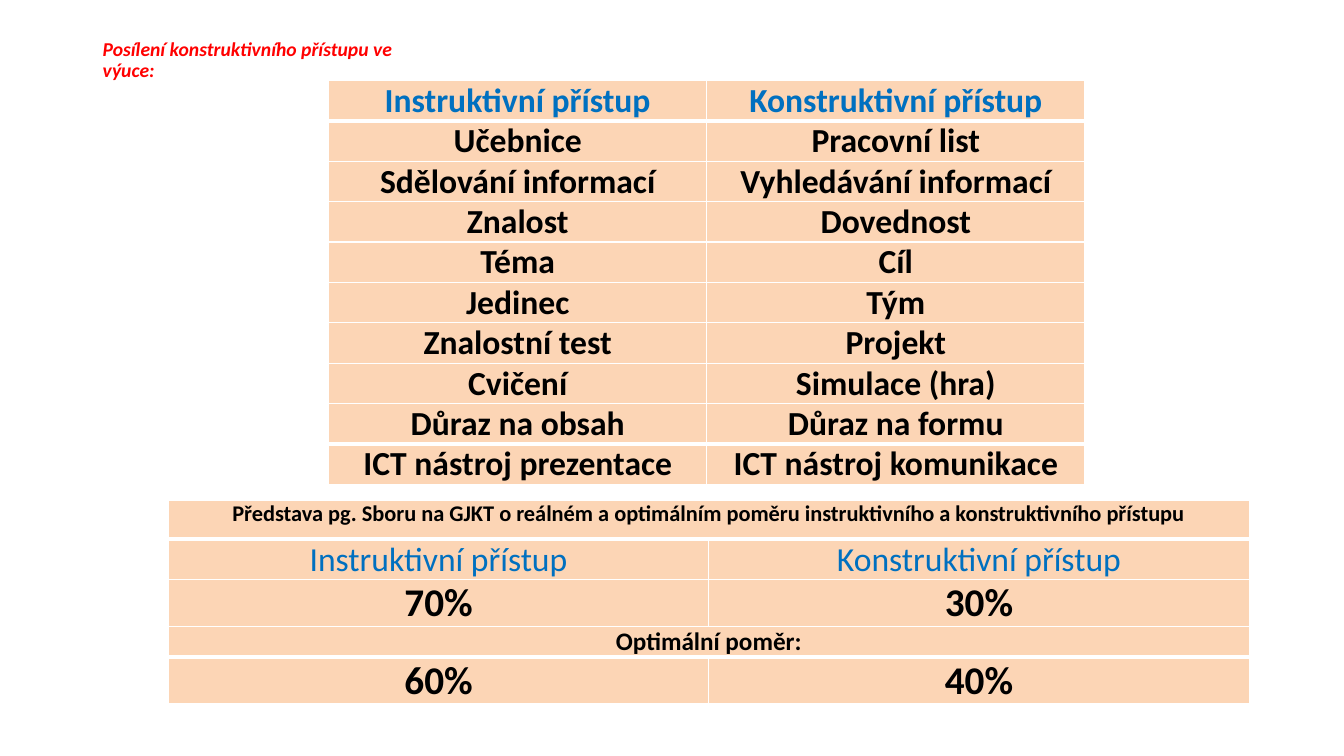
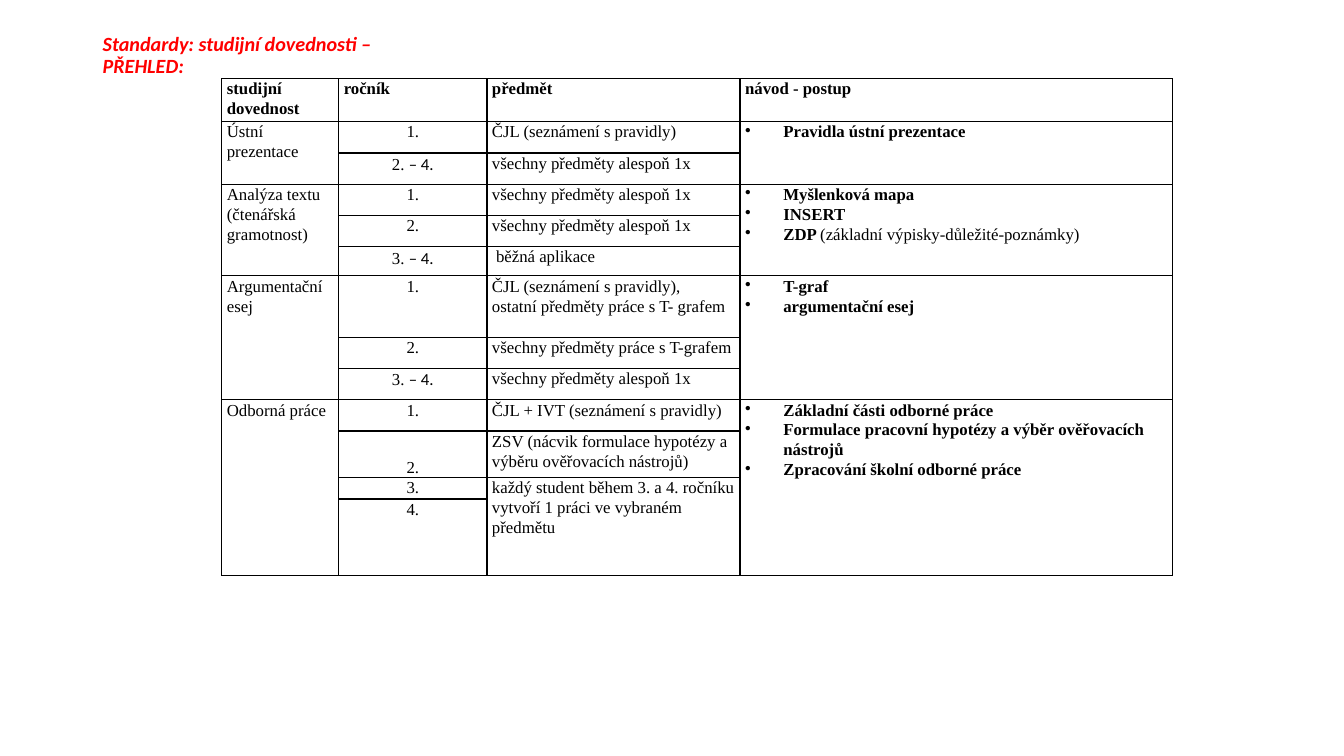
from dataclasses import dataclass, field
from typing import Any, Optional

from lxml.etree import SubElement
from pptx import Presentation
from pptx.dml.color import RGBColor
from pptx.dml.fill import FillFormat
from pptx.enum.text import MSO_ANCHOR, PP_ALIGN
from pptx.oxml.ns import qn
from pptx.slide import Slide
from pptx.table import _Cell
from pptx.text.text import TextFrame, _Paragraph
from pptx.util import Emu, Pt

EMU_PER_PX = 9144
RED, BLUE, BLACK, WHITE, PEACH = "FF0000", "0070C0", "000000", "FFFFFF", "FCD5B5"
SANS, SERIF = "Calibri", "Times New Roman"
TITLE_LEFT, TITLE_TOP = 92, 40
BULLET_INDENT = 38
NO_STYLE = {"first_row": False, "horz_banding": False}


@dataclass
class Run:
    text: str
    bold: bool = False
    font: str = SERIF
    size: float = 12
    color: str = BLACK
    italic: bool = False


Line = tuple[Run, ...]


@dataclass
class Entry:
    lines: list[Line]
    align: PP_ALIGN = PP_ALIGN.LEFT
    anchor: MSO_ANCHOR = MSO_ANCHOR.TOP
    bulleted: bool = False
    indent: int = 0
    rows: int = 1
    columns: int = 1


Row = list[Optional[Entry]]


@dataclass
class Grid:
    left: int
    top: int
    widths: list[int]
    heights: list[int]
    rows: list[Row]
    margin: int
    border: str
    fill: Optional[str] = None
    spacing: Optional[float] = None
    thick_below: set[int] = field(default_factory=set)


def px(length: int) -> Emu:
    return Emu(length * EMU_PER_PX)


def paint(fill: FillFormat, color: str) -> None:
    fill.solid()
    fill.fore_color.rgb = RGBColor.from_string(color)


def apply(target: Any, formats: dict[str, Any]) -> None:
    for name, value in formats.items():
        setattr(target, name, value)


def write_line(paragraph: _Paragraph, line: Line) -> None:
    for part in line:
        run = paragraph.add_run()
        run.text = part.text
        apply(run.font, {"name": part.font, "size": Pt(part.size),
                         "bold": part.bold, "italic": part.italic})
        paint(run.font.fill, part.color)


def write_lines(frame: TextFrame, lines: list[Line], formats: dict[str, Any]) -> None:
    for number, line in enumerate(lines):
        paragraph = frame.add_paragraph() if number else frame.paragraphs[0]
        apply(paragraph, formats)
        write_line(paragraph, line)


def indent_lines(frame: TextFrame, entry: Entry) -> None:
    for paragraph in frame.paragraphs:
        properties = paragraph._p.get_or_add_pPr()
        if entry.bulleted:
            properties.set("marL", str(px(BULLET_INDENT)))
            properties.set("indent", str(-px(BULLET_INDENT)))
            SubElement(properties, qn("a:buChar"), char="•")
        elif entry.indent:
            properties.set("marL", str(px(entry.indent)))


def draw_borders(cell: _Cell, color: str, widths: dict[str, int]) -> None:
    properties = cell._tc.get_or_add_tcPr()
    for position, (side, width) in enumerate(widths.items()):
        line = SubElement(properties, qn(f"a:ln{side}"), w=str(Pt(width)))
        solid = SubElement(line, qn("a:solidFill"))
        SubElement(solid, qn("a:srgbClr"), val=color)
        properties.insert(position, line)


def draw_cell(cell: _Cell, entry: Optional[Entry], grid: Grid, row: int) -> None:
    apply(cell, {"margin_left": px(grid.margin), "margin_right": px(grid.margin),
                 "margin_top": 0, "margin_bottom": 0})
    if grid.fill:
        paint(cell.fill, grid.fill)
    else:
        cell.fill.background()
    draw_borders(cell, grid.border, {
        "L": 1, "R": 1,
        "T": 3 if row - 1 in grid.thick_below else 1,
        "B": 3 if row in grid.thick_below else 1,
    })
    if entry:
        cell.vertical_anchor = entry.anchor
        write_lines(cell.text_frame, entry.lines,
                    {"alignment": entry.align, "line_spacing": grid.spacing})
        indent_lines(cell.text_frame, entry)


def draw_grid(slide: Slide, grid: Grid) -> None:
    table = slide.shapes.add_table(
        len(grid.heights), len(grid.widths), px(grid.left), px(grid.top),
        px(sum(grid.widths)), px(sum(grid.heights))).table
    apply(table, NO_STYLE)
    for column, width in zip(table.columns, grid.widths):
        column.width = px(width)
    for table_row, height in zip(table.rows, grid.heights):
        table_row.height = px(height)
    for r, entries in enumerate(grid.rows):
        for c, entry in enumerate(entries):
            draw_cell(table.cell(r, c), entry, grid, r)
            if entry and entry.rows * entry.columns > 1:
                last = table.cell(r + entry.rows - 1, c + entry.columns - 1)
                table.cell(r, c).merge(last)


def draw_title(slide: Slide, text: str, width: int, height: int, size: float) -> None:
    frame = slide.shapes.add_textbox(
        px(TITLE_LEFT), px(TITLE_TOP), px(width), px(height)).text_frame
    apply(frame, {"word_wrap": True, "vertical_anchor": MSO_ANCHOR.MIDDLE})
    write_lines(frame, [(Run(text, True, SANS, size, RED, True),)], {"line_spacing": 0.9})


def centred(text: str, size: float, color: str = BLACK, bold: bool = True,
            columns: int = 1) -> Entry:
    return Entry([(Run(text, bold, SANS, size, color),)], PP_ALIGN.CENTER, columns=columns)


def label(*texts: str, bold: bool = False, rows: int = 1, indent: int = 0) -> Entry:
    return Entry([(Run(text, bold),) for text in texts], rows=rows, indent=indent)


def year(start: str, end: str = "", anchor: MSO_ANCHOR = MSO_ANCHOR.TOP) -> Entry:
    line = (Run(f"{start} "), Run(end, font=SANS)) if end else (Run(start),)
    return Entry([line], PP_ALIGN.CENTER, anchor)


def guide(*lines: Line, rows: int) -> Entry:
    return Entry(list(lines), bulleted=True, rows=rows)


def strong(text: str) -> Line:
    return (Run(text, True),)


APPROACHES = ("Instruktivní přístup", "Konstruktivní přístup")
CONTRASTS = [
    ("Učebnice", "Pracovní list"),
    ("Sdělování informací", "Vyhledávání informací"),
    ("Znalost", "Dovednost"),
    ("Téma", "Cíl"),
    ("Jedinec", "Tým"),
    ("Znalostní test", "Projekt"),
    ("Cvičení", "Simulace (hra)"),
    ("Důraz na obsah", "Důraz na formu"),
    ("ICT nástroj prezentace", "ICT nástroj komunikace"),
]
EVERY_SUBJECT = "všechny předměty alespoň 1x"

comparison = Grid(
    326, 80, [375] * 2, [37] * (len(CONTRASTS) + 1),
    [[centred(name, 24, BLUE) for name in APPROACHES]]
    + [[centred(text, 24) for text in pair] for pair in CONTRASTS],
    7, WHITE, PEACH, thick_below={0, 8})

ratios = Grid(
    167, 496, [536] * 2, [39, 34, 39, 25, 29],
    [
        [centred("Představa pg. Sboru na GJKT o reálném a optimálním poměru "
                 "instruktivního a konstruktivního přístupu", 16, columns=2), None],
        [centred(name, 24, BLUE, False) for name in APPROACHES],
        [centred(share, 28) for share in ("70%", "30%")],
        [centred("Optimální poměr:", 18, columns=2), None],
        [centred(share, 28) for share in ("60%", "40%")],
    ],
    7, WHITE, PEACH, thick_below={0, 3})

standards = Grid(
    220, 78, [116, 147, 251, 429],
    [39, 31, 31, 31, 31, 29, 61, 31, 31, 31, 46, 19, 76],
    [
        [label(heading, bold=True)
         for heading in ("studijní dovednost", "ročník", "předmět", "návod - postup")],
        [label("Ústní prezentace", rows=2), year("1."),
         label("ČJL (seznámení s pravidly)"),
         guide(strong("Pravidla ústní prezentace"), rows=2)],
        [None, year("2.", "– 4."), label(EVERY_SUBJECT), None],
        [label("Analýza textu (čtenářská gramotnost)", rows=3), year("1."),
         label(EVERY_SUBJECT),
         guide(strong("Myšlenková mapa"), strong("INSERT"),
               (Run("ZDP ", True), Run("(základní výpisky-důležité-poznámky)")), rows=3)],
        [None, year("2."), label(EVERY_SUBJECT), None],
        [None, year("3.", "– 4."), label("běžná aplikace", indent=4), None],
        [label("Argumentační esej", rows=3), year("1."),
         label("ČJL (seznámení s pravidly),", "ostatní předměty práce s T- grafem"),
         guide(strong("T-graf"), strong("argumentační esej"), rows=3)],
        [None, year("2."), label("všechny předměty práce s T-grafem"), None],
        [None, year("3.", "– 4."), label(EVERY_SUBJECT), None],
        [label("Odborná práce", rows=4), year("1."),
         label("ČJL + IVT (seznámení s pravidly)"),
         guide(strong("Základní části odborné práce"),
               strong("Formulace pracovní hypotézy a výběr ověřovacích nástrojů"),
               strong("Zpracování školní odborné práce"), rows=4)],
        [None, year("2.", anchor=MSO_ANCHOR.BOTTOM),
         label("ZSV (nácvik formulace hypotézy a výběru ověřovacích nástrojů)"), None],
        [None, year("3."),
         label("každý student během 3. a 4. ročníku vytvoří 1 práci ve vybraném předmětu",
               rows=2), None],
        [None, year("4."), None, None],
    ],
    5, BLACK, spacing=1.07)


def main() -> None:
    deck = Presentation()
    apply(deck, {"slide_width": px(1333), "slide_height": px(750)})
    blank = deck.slide_layouts[6]

    approaches = deck.slides.add_slide(blank)
    draw_title(approaches, "Posílení konstruktivního přístupu ve výuce:", 345, 40, 14)
    draw_grid(approaches, comparison)
    draw_grid(approaches, ratios)

    skills = deck.slides.add_slide(blank)
    draw_title(skills, "Standardy: studijní dovednosti – PŘEHLED:", 356, 31, 14.4)
    draw_grid(skills, standards)

    deck.save("out.pptx")


if __name__ == "__main__":
    main()
